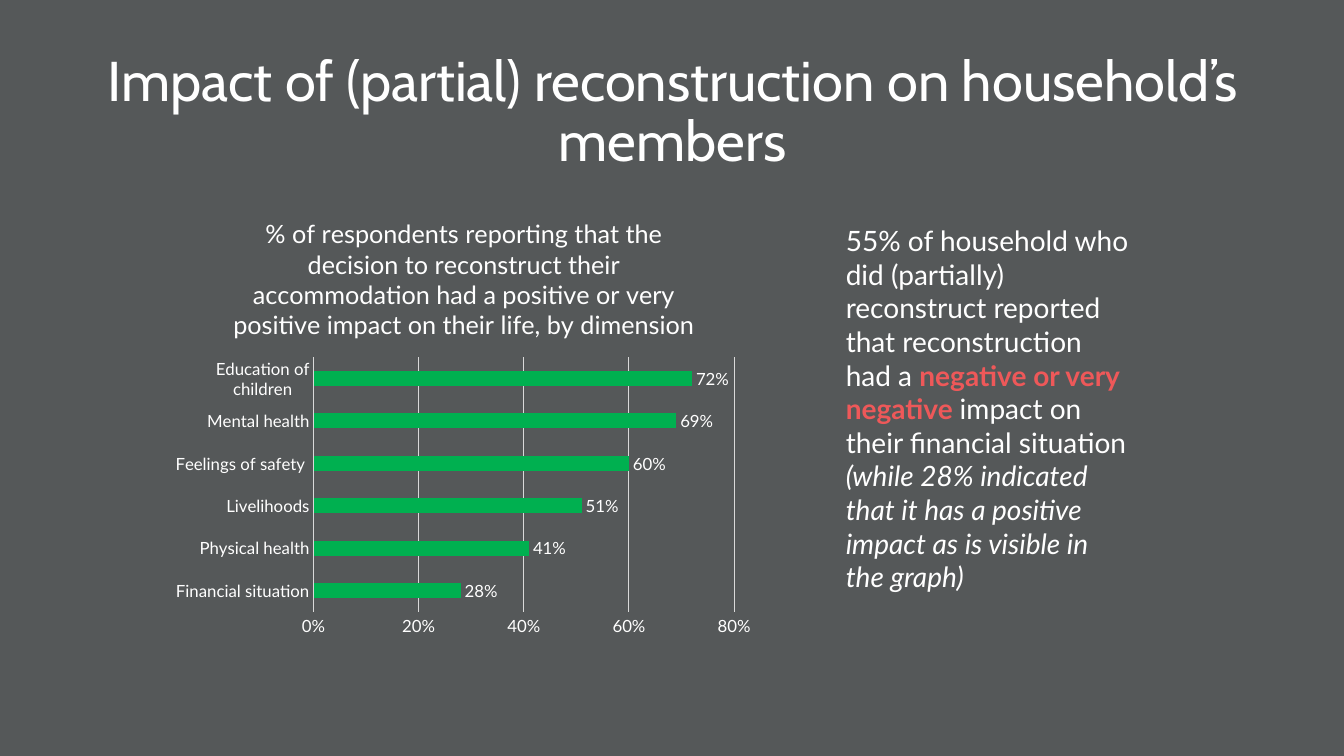
import pptx
import pptx.chart.data
import pptx.dml.color
import pptx.enum.chart
import pptx.enum.text
import pptx.util
from lxml import etree

Inches, Pt = pptx.util.Inches, pptx.util.Pt
WHITE, GREY, GREEN, RED, GRID = "FFFFFF", "555859", "00B050", "EE5859", "D9D9D9"
IMPACT = {
    "Financial situation": 0.28,
    "Physical health": 0.41,
    "Livelihoods": 0.51,
    "Feelings of safety ": 0.6,
    "Mental health": 0.69,
    "Education of children": 0.72,
}


def paint(part, color):
    """Give a fill a solid colour."""
    part.solid()
    part.fore_color.rgb = pptx.dml.color.RGBColor.from_string(color)


def style(font, size, name="Lato"):
    font.size, font.name, font.bold = Pt(size), name, False
    paint(font.fill, WHITE)


deck = pptx.Presentation()
deck.slide_width, deck.slide_height = Inches(13.33), Inches(7.5)
slide = deck.slides.add_slide(deck.slide_layouts[5])
paint(slide.background.fill, GREY)

# Title
title = slide.shapes.title
title.left, title.top = Inches(0.92), Inches(0.4)
title.width, title.height = Inches(11.5), Inches(1.45)
title.text_frame.text = "Impact of (partial) reconstruction on household’s members"
title.text_frame.vertical_anchor = pptx.enum.text.MSO_ANCHOR.MIDDLE
head = title.text_frame.paragraphs[0]
head.alignment = pptx.enum.text.PP_ALIGN.CENTER
head.line_spacing = 0.9
style(head.font, 40, "Cabin")

# Bar chart
data = pptx.chart.data.CategoryChartData(number_format="0%")
data.categories = list(IMPACT)
data.add_series("Series 1", list(IMPACT.values()))
chart = slide.shapes.add_chart(
    pptx.enum.chart.XL_CHART_TYPE.BAR_CLUSTERED,
    Inches(1.62), Inches(1.95), Inches(5.96), Inches(4.43), data).chart
style(chart.font, 12)
chart.has_legend = False
chart.has_title = True
label = chart.chart_title.text_frame
label.text = ("% of respondents reporting that the decision to reconstruct their "
              "accommodation had a positive or very positive impact on their life, "
              "by dimension")
style(label.paragraphs[0].font, 18)

plot = chart.plots[0]
plot.gap_width = 182
plot.vary_by_categories = False
paint(plot.series[0].format.fill, GREEN)
plot.has_data_labels = True
tags = plot.data_labels
tags.show_value = True
tags.number_format, tags.number_format_is_linked = "0%", False
tags.position = pptx.enum.chart.XL_LABEL_POSITION.OUTSIDE_END
style(tags.font, 12)

cats, vals = chart.category_axis, chart.value_axis
for axis in (cats, vals):
    axis.major_tick_mark = axis.minor_tick_mark = pptx.enum.chart.XL_TICK_MARK.NONE
    style(axis.tick_labels.font, 12)
cats.has_major_gridlines = False
vals.has_major_gridlines = True
vals.minimum_scale, vals.maximum_scale, vals.major_unit = 0, 0.8, 0.2
vals.tick_labels.number_format = "0%"
vals.tick_labels.number_format_is_linked = False
vals.format.line.fill.background()
for line in (cats.format.line, vals.major_gridlines.format.line):
    paint(line.fill, GRID)
    line.width = Pt(0.75)

# Fixed place of the bars inside the chart, as shares of its size
NS = "http://schemas.openxmlformats.org/drawingml/2006/chart"
area = chart.element.find(f".//{{{NS}}}plotArea")
for old in area.findall(f"{{{NS}}}layout"):
    area.remove(old)
layout = etree.Element(f"{{{NS}}}layout")
manual = etree.SubElement(layout, f"{{{NS}}}manualLayout")
for tag, val in (("layoutTarget", "inner"), ("xMode", "edge"), ("yMode", "edge"),
                 ("x", 0.25), ("y", 0.36), ("w", 0.7), ("h", 0.57)):
    etree.SubElement(manual, f"{{{NS}}}{tag}", val=str(val))
area.insert(0, layout)

# Finding
note = slide.shapes.add_textbox(Inches(8.29), Inches(2.17), Inches(3.02), Inches(3.8))
note.text_frame.word_wrap = True
para = note.text_frame.paragraphs[0]
style(para.font, 20)
for text, bold, italic in (
    ("55% of household who did (partially) reconstruct reported that "
     "reconstruction had a ", False, False),
    ("negative or very negative ", True, False),
    ("impact on their financial situation ", False, False),
    ("(while 28% indicated that it has a positive impact as is visible in "
     "the graph)", False, True),
):
    run = para.add_run()
    run.text = text
    run.font.bold, run.font.italic = bold, italic
    paint(run.font.fill, RED if bold else WHITE)

deck.save("out.pptx")
